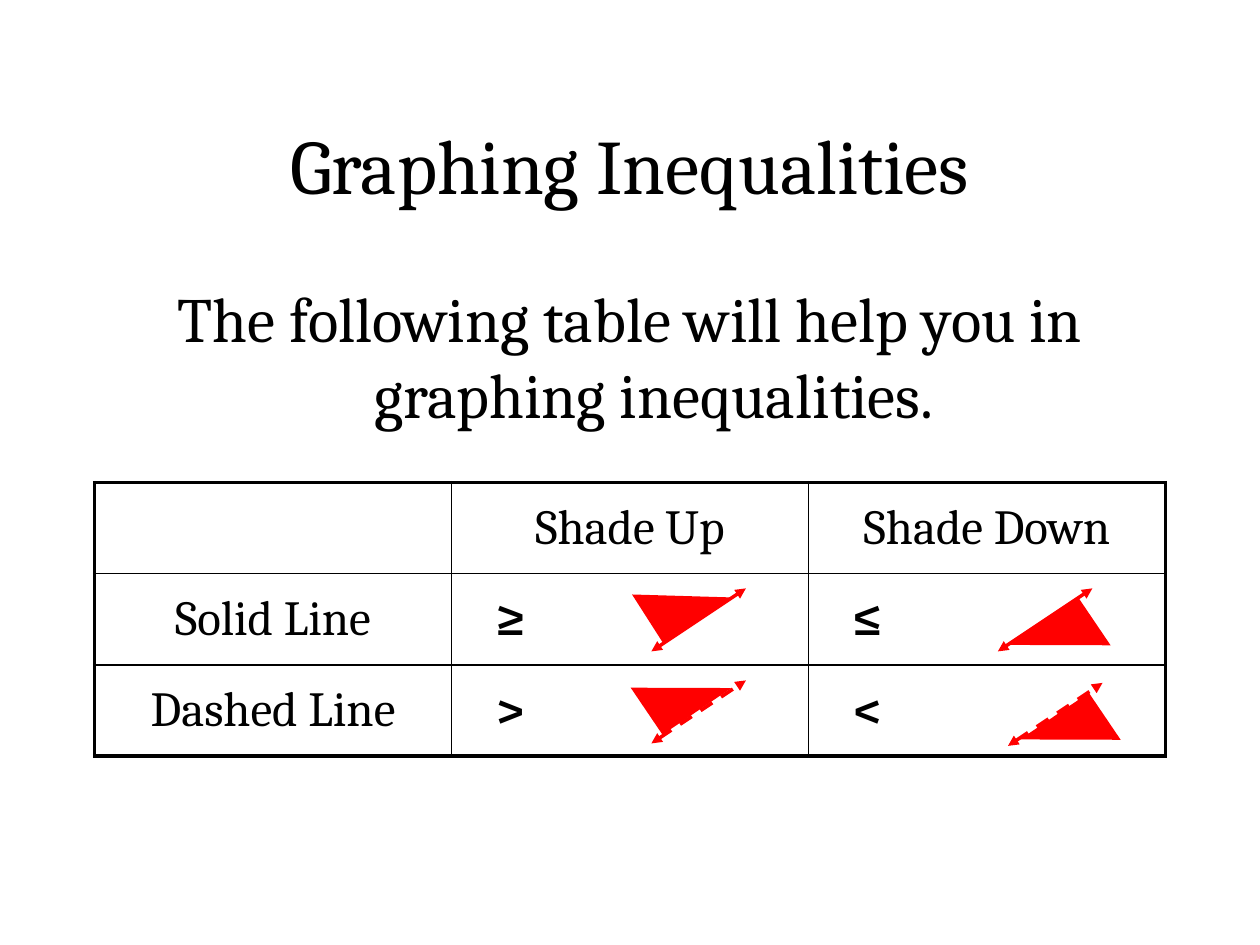
from pptx import Presentation
from pptx.dml.color import RGBColor
from pptx.enum.dml import MSO_LINE
from pptx.enum.shapes import MSO_CONNECTOR, MSO_SHAPE
from pptx.enum.text import MSO_ANCHOR, PP_ALIGN
from pptx.oxml.ns import qn
from pptx.util import Inches, Pt
from lxml import etree

BLACK = RGBColor(0, 0, 0)
RED = RGBColor(0xFF, 0, 0)
FONT = "Cambria"
CENTER, LEFT = PP_ALIGN.CENTER, PP_ALIGN.LEFT
MIDDLE, TOP = MSO_ANCHOR.MIDDLE, MSO_ANCHOR.TOP
STRAIGHT, RIGHT_TRIANGLE = MSO_CONNECTOR.STRAIGHT, MSO_SHAPE.RIGHT_TRIANGLE
SOLID, DASH = MSO_LINE.SOLID, MSO_LINE.DASH
THICK, THIN = Pt(2.25), Pt(1)


def write(frame, text, size, align=CENTER, bold=False, before=0):
    paragraph = frame.paragraphs[0]
    paragraph.text = text
    paragraph.alignment = align
    paragraph.space_before = Pt(before)
    font = paragraph.runs[0].font
    font.name, font.size, font.bold = FONT, Pt(size), bold
    font.color.rgb = BLACK
    return paragraph


def set_borders(cell, widths):
    properties = cell._tc.get_or_add_tcPr()
    for position, (side, width) in enumerate(widths.items()):
        border = etree.Element(qn(f"a:ln{side}"), w=str(width))
        fill = etree.SubElement(border, qn("a:solidFill"))
        etree.SubElement(fill, qn("a:srgbClr"), val=str(BLACK))
        properties.insert(position, border)


prs = Presentation()
prs.slide_width, prs.slide_height = Inches(10), Inches(7.5)
slide = prs.slides.add_slide(prs.slide_layouts[6])
shapes = slide.shapes

# Title and introduction
title = shapes.add_textbox(Inches(0.75), Inches(0.67), Inches(8.5), Inches(1.25)).text_frame
title.word_wrap = True
title.vertical_anchor = MIDDLE
write(title, "Graphing Inequalities", 44)

intro = shapes.add_textbox(Inches(0.75), Inches(2.17), Inches(8.5), Inches(1.42)).text_frame
intro.word_wrap = True
intro.vertical_anchor = TOP
intro_line = write(intro, "The following table will help you in graphing inequalities.", 36, before=7.2)
hanging = intro_line._p.get_or_add_pPr()
hanging.set("marL", str(Inches(0.38)))
hanging.set("indent", str(-Inches(0.38)))

# Table of inequality signs
ROWS = [
    ["", "Shade Up", "Shade Down"],
    ["Solid Line", "≥", "≤"],
    ["Dashed Line", ">", "<"],
]
last = len(ROWS) - 1
table = shapes.add_table(3, 3, Inches(0.75), Inches(3.83), Inches(8.5), Inches(2.17)).table
table.first_row = table.horz_banding = False
for r, row in enumerate(ROWS):
    for c, text in enumerate(row):
        cell = table.cell(r, c)
        cell.fill.background()
        cell.vertical_anchor = MIDDLE
        set_borders(cell, {
            "L": THICK if c == 0 else THIN,
            "R": THICK if c == last else THIN,
            "T": THICK if r == 0 else THIN,
            "B": THICK if r == last else THIN,
        })
        is_sign = r > 0 and c > 0
        if is_sign:
            cell.margin_left = Inches(0.35)
        if text:
            write(cell.text_frame, text, 28, LEFT if is_sign else CENTER, is_sign, 5.6)

# Boundary lines, each running up to the right with two arrowheads
BOUNDARIES = [(5.17, 5.17, SOLID), (7.92, 5.17, SOLID), (5.17, 5.9, DASH), (8, 5.92, DASH)]
for x, y, dash in BOUNDARIES:
    boundary = shapes.add_connector(
        STRAIGHT, Inches(x), Inches(y), Inches(x + 0.75), Inches(y - 0.5))
    boundary.line.color.rgb = RED
    boundary.line.width = Pt(2)
    boundary.line.dash_style = dash
    outline = boundary.line._get_or_add_ln()
    for end in ("headEnd", "tailEnd"):
        etree.SubElement(outline, qn(f"a:{end}"), type="triangle")
    etree.SubElement(boundary._element.spPr, qn("a:effectLst"))

# Shaded half-planes
REGIONS = [(5.19, 4.4, 237.4), (5.18, 5.13, 235.9), (8.19, 4.79, 55.9), (8.27, 5.54, 55.9)]
for x, y, angle in REGIONS:
    region = shapes.add_shape(RIGHT_TRIANGLE, Inches(x), Inches(y), Inches(0.45), Inches(0.66))
    region.rotation = angle
    region._element.spPr.find(qn("a:xfrm")).set("flipV", "1")
    region.shadow.inherit = False
    region.fill.solid()
    region.fill.fore_color.rgb = RED
    region.line.fill.background()

prs.save("out.pptx")
